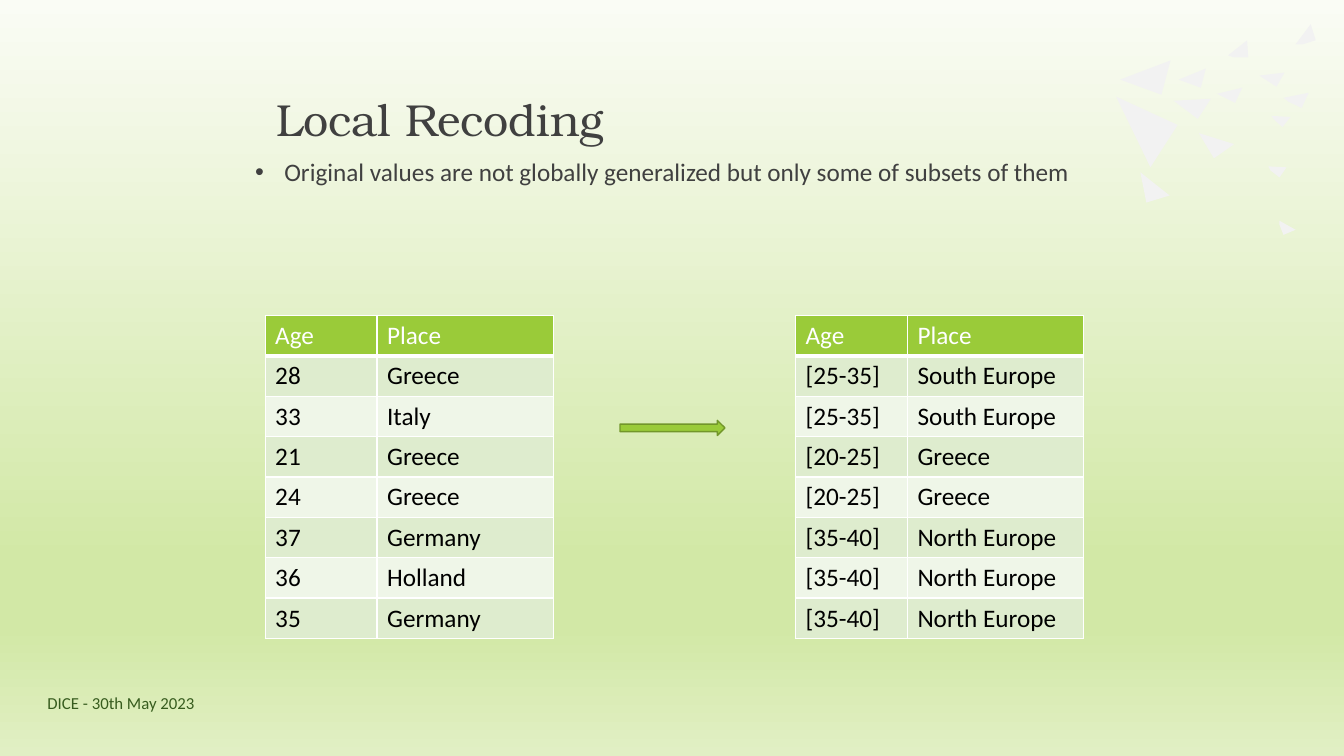
from dataclasses import dataclass

from lxml import etree
from pptx import Presentation
from pptx import util as u
from pptx.dml.color import RGBColor
from pptx.enum import shapes, text
from pptx.oxml.ns import qn

PX = 9144


@dataclass(frozen=True)
class Theme:
    backdrop: tuple = ((0, "FAFCF5"), (74, "D2E8A6"), (83, "D2E8A6"), (100, "E1EFC4"))
    ink: str = "404040"
    footer: str = "375C1E"
    accent: str = "9ACB39"
    accent_edge: str = "72962A"
    shard: str = "F2F2F2"
    white: str = "FFFFFF"
    black: str = "000000"
    bands: tuple = ("DEECCE", "EFF6E8")
    title_font: str = "TeX Gyre Bonum"
    body_font: str = "Calibri"
    title_size: int = 32
    body_size: int = 18
    footer_size: int = 12


def px(*lengths):
    return [u.Emu(length * PX) for length in lengths]


def add_solid(parent, color):
    fill = etree.SubElement(parent, qn("a:solidFill"))
    etree.SubElement(fill, qn("a:srgbClr"), val=color)


class SlideBuilder:
    def __init__(self, slide, theme):
        self.slide = slide
        self.theme = theme

    def background(self):
        fill = self.slide.background.fill
        fill.gradient()
        fill.gradient_angle = 270
        stops = next(self.slide.element.iter(qn("a:gsLst")))
        for stop in list(stops):
            stops.remove(stop)
        for percent, color in self.theme.backdrop:
            stop = etree.SubElement(stops, qn("a:gs"), pos=str(percent * 1000))
            etree.SubElement(stop, qn("a:srgbClr"), val=color)

    def paint(self, shape, fill, edge=None):
        shape.shadow.inherit = False
        shape.fill.solid()
        shape.fill.fore_color.rgb = RGBColor.from_string(fill)
        if edge:
            shape.line.color.rgb = RGBColor.from_string(edge)
            shape.line.width = u.Pt(1)
        else:
            shape.line.fill.background()

    def shard(self, corners):
        start, *others = [px(*corner) for corner in corners]
        outline = self.slide.shapes.build_freeform(*start)
        outline.add_line_segments(others, close=True)
        self.paint(outline.convert_to_shape(), self.theme.shard)

    def style(self, paragraph, size, color, font):
        for run in paragraph.runs:
            run.font.size = u.Pt(size)
            run.font.name = font
            run.font.color.rgb = RGBColor.from_string(color)

    def textbox(self, box, words, size, color, font, anchor=text.MSO_ANCHOR.MIDDLE):
        frame = self.slide.shapes.add_textbox(*px(*box)).text_frame
        frame.word_wrap = True
        frame.vertical_anchor = anchor
        frame.margin_left = frame.margin_right = frame.margin_top = frame.margin_bottom = 0
        frame.text = words
        paragraph = frame.paragraphs[0]
        self.style(paragraph, size, color, font)
        return paragraph

    def bullet(self, box, words):
        theme = self.theme
        point = self.textbox(box, words, theme.body_size, theme.ink, theme.body_font,
                             text.MSO_ANCHOR.TOP)
        point.line_spacing = 0.9
        point.space_before = u.Pt(10)
        indent = px(29)[0]
        properties = point._p.get_or_add_pPr()
        properties.set("marL", str(indent))
        properties.set("indent", str(-indent))
        etree.SubElement(properties, qn("a:buFont"), typeface="Arial")
        etree.SubElement(properties, qn("a:buChar"), char="•")

    def cell_borders(self, cell, row):
        properties = cell._tc.get_or_add_tcPr()
        heavy = {0: "lnB", 1: "lnT"}.get(row)
        for position, side in enumerate(("lnL", "lnR", "lnT", "lnB")):
            width = u.Pt(3 if side == heavy else 1)
            border = etree.Element(qn(f"a:{side}"), w=str(width))
            add_solid(border, self.theme.white)
            properties.insert(position, border)

    def table(self, left, top, widths, row_height, records):
        theme = self.theme
        box = px(left, top, sum(widths), row_height * len(records))
        grid = self.slide.shapes.add_table(len(records), len(widths), *box).table
        for column, width in zip(grid.columns, px(*widths)):
            column.width = width
        for row, record in enumerate(records):
            fill = theme.bands[(row - 1) % 2] if row else theme.accent
            color = theme.black if row else theme.white
            for column, value in enumerate(record):
                cell = grid.cell(row, column)
                cell.text = value
                paragraph = cell.text_frame.paragraphs[0]
                self.style(paragraph, theme.body_size, color, theme.body_font)
                for run in paragraph.runs:
                    run.font.bold = False
                cell.fill.solid()
                cell.fill.fore_color.rgb = RGBColor.from_string(fill)
                self.cell_borders(cell, row)

    def arrow(self, box):
        arrow = self.slide.shapes.add_shape(shapes.MSO_SHAPE.RIGHT_ARROW, *px(*box))
        self.paint(arrow, self.theme.accent, self.theme.accent_edge)


SHARDS = (
    ((1161, 60), (1152, 94), (1111, 79)),
    ((1201, 98), (1188, 118), (1164, 100)),
    ((1196, 68), (1191, 87), (1169, 79)),
    ((1232, 87), (1225, 102), (1207, 93)),
    ((1237, 40), (1238, 57), (1224, 57), (1218, 55)),
    ((1280, 116), (1272, 126), (1264, 119), (1261, 115)),
    ((1300, 24), (1305, 40), (1292, 44), (1285, 44)),
    ((1274, 72), (1266, 86), (1249, 75)),
    ((1298, 92), (1291, 107), (1278, 101), (1273, 97)),
    ((1168, 124), (1141, 166), (1107, 96)),
    ((1224, 143), (1204, 157), (1189, 132)),
    ((1276, 166), (1269, 176), (1260, 169), (1258, 165)),
    ((1160, 194), (1137, 201), (1131, 171)),
    ((1285, 228), (1273, 233), (1269, 223), (1269, 219)),
)
HEADER = ("Age", "Place")
ORIGINAL_RECORDS = (
    HEADER,
    ("28", "Greece"),
    ("33", "Italy"),
    ("21", "Greece"),
    ("24", "Greece"),
    ("37", "Germany"),
    ("36", "Holland"),
    ("35", "Germany"),
)
RECODED_RECORDS = (
    HEADER,
    *[("[25-35]", "South Europe")] * 2,
    *[("[20-25]", "Greece")] * 2,
    *[("[35-40]", "North Europe")] * 3,
)


def main():
    deck = Presentation()
    deck.slide_width, deck.slide_height = px(1333, 750)
    theme = Theme()
    page = SlideBuilder(deck.slides.add_slide(deck.slide_layouts[6]), theme)
    page.background()
    for corners in SHARDS:
        page.shard(corners)
    page.bullet((253, 158, 841, 191),
                "Original values are not globally generalized but only some of subsets of them")
    title = page.textbox((274, 50, 843, 142), "Local Recoding",
                         theme.title_size, theme.ink, theme.title_font)
    title.line_spacing = 0.9
    page.textbox((47, 677, 961, 40), "DICE - 30th May 2023",
                 theme.footer_size, theme.footer, theme.body_font)
    for left, records in ((263, ORIGINAL_RECORDS), (789, RECODED_RECORDS)):
        page.table(left, 313, (111, 175), 40, records)
    page.arrow((615, 417, 104, 15))
    deck.save("out.pptx")


if __name__ == "__main__":
    main()
